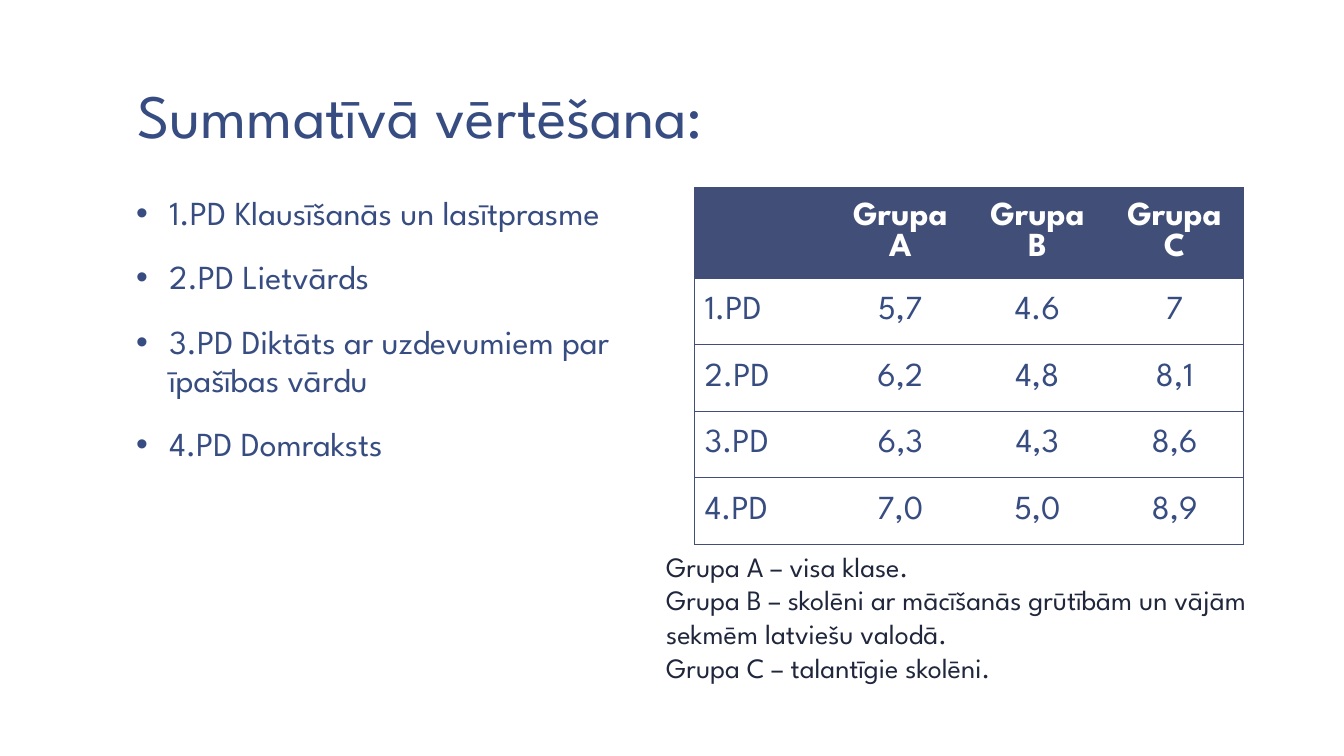
from pptx import Presentation
from pptx.dml.color import RGBColor
from pptx.enum.text import MSO_ANCHOR as Anchor, PP_ALIGN as Align
from pptx.oxml.ns import qn
from pptx.util import Inches, Pt
from lxml.etree import SubElement

FONT = "League Spartan"
BLUE, NAVY, INK, WHITE = "374C81", "414E77", "20273C", "FFFFFF"

TITLE = "Summatīvā vērtēšana:"
TESTS = [
    "1.PD Klausīšanās un lasītprasme",
    "2.PD Lietvārds",
    "3.PD Diktāts ar uzdevumiem par īpašības vārdu",
    "4.PD Domraksts",
]
RESULTS = [
    ["", "Grupa A", "Grupa B", "Grupa\nC"],
    ["1.PD", "5,7", "4.6", "7"],
    ["2.PD", "6,2", "4,8", "8,1"],
    ["3.PD", "6,3", "4,3", "8,6"],
    ["4.PD", "7,0", "5,0", "8,9"],
]
GROUPS = [
    "Grupa A – visa klase.",
    "Grupa B – skolēni ar mācīšanās grūtībām un vājām sekmēm latviešu valodā.",
    "Grupa C – talantīgie skolēni.",
]


def color(code):
    return RGBColor.from_string(code)


def style(para, size, code, bold=False):
    font = para.font
    font.name, font.size, font.bold = FONT, Pt(size), bold
    font.color.rgb = color(code)


def add_text(page, box, lines, size, code, inset=(0.1, 0.05), anchor=Anchor.TOP):
    """Place one paragraph per line in the box and return the paragraphs."""
    frame = page.shapes.add_textbox(*map(Inches, box)).text_frame
    frame.word_wrap = True
    frame.vertical_anchor = anchor
    frame.margin_left = frame.margin_right = Inches(inset[0])
    frame.margin_top = frame.margin_bottom = Inches(inset[1])
    frame.text = "\n".join(lines)
    for para in frame.paragraphs:
        style(para, size, code)
    return frame.paragraphs


def add_title(page, box):
    title, = add_text(page, box, [TITLE], 44, BLUE, (0.13, 0.07), Anchor.BOTTOM)
    title.line_spacing = 0.85


def add_test_list(page, box):
    for index, para in enumerate(add_text(page, box, TESTS, 24, BLUE, (0.13, 0.07))):
        para.line_spacing = 0.95
        if index:
            para.space_before = Pt(18.7)
        props = para._p.get_or_add_pPr()
        props.set("marL", str(Inches(0.33)))
        props.set("indent", str(-Inches(0.33)))
        bullet_font = props.makeelement(qn("a:buFont"), {"typeface": "Arial"})
        bullet = props.makeelement(qn("a:buChar"), {"char": "•"})
        default_run = props.find(qn("a:defRPr"))
        default_run.addprevious(bullet_font)
        default_run.addprevious(bullet)


def set_borders(cell, visible):
    """Draw thin navy lines on the visible sides and clear the others."""
    props = cell._tc.get_or_add_tcPr()
    for side in "LRTB":
        line = SubElement(props, qn(f"a:ln{side}"), w=str(Pt(0.5)))
        if side in visible:
            fill = SubElement(line, qn("a:solidFill"))
            SubElement(fill, qn("a:srgbClr"), val=NAVY)
        else:
            SubElement(line, qn("a:noFill"))


def add_results(page, box):
    rows, columns = len(RESULTS), len(RESULTS[0])
    table = page.shapes.add_table(rows, columns, *map(Inches, box)).table
    table.horz_banding = False
    for row in table.rows:
        row.height = Inches(0.66)
    for r, values in enumerate(RESULTS):
        header = r == 0
        for c, value in enumerate(values):
            cell = table.cell(r, c)
            sides = {0: "LTB", columns - 1: "RTB"}.get(c, "TB")
            set_borders(cell, sides)
            if header:
                cell.fill.solid()
                cell.fill.fore_color.rgb = color(NAVY)
            else:
                cell.fill.background()
            cell.vertical_anchor = Anchor.MIDDLE
            cell.text = value
            for para in cell.text_frame.paragraphs:
                para.alignment = Align.CENTER if c else Align.LEFT
                style(para, 24, WHITE if header else BLUE, header)


def add_group_key(page, box):
    add_text(page, box, GROUPS, 20, INK)


def main():
    deck = Presentation()
    deck.slide_width, deck.slide_height = Inches(13.33), Inches(7.5)
    page = deck.slides.add_slide(deck.slide_layouts[6])
    page.background.fill.solid()
    page.background.fill.fore_color.rgb = color(WHITE)
    add_title(page, (1.23, 0.04, 11.11, 1.53))
    add_test_list(page, (1.22, 1.86, 5.36, 4.8))
    add_results(page, (6.89, 1.86, 5.44, 3.3))
    add_group_key(page, (6.51, 5.4, 6.3, 1.45))
    deck.save("out.pptx")


if __name__ == "__main__":
    main()
